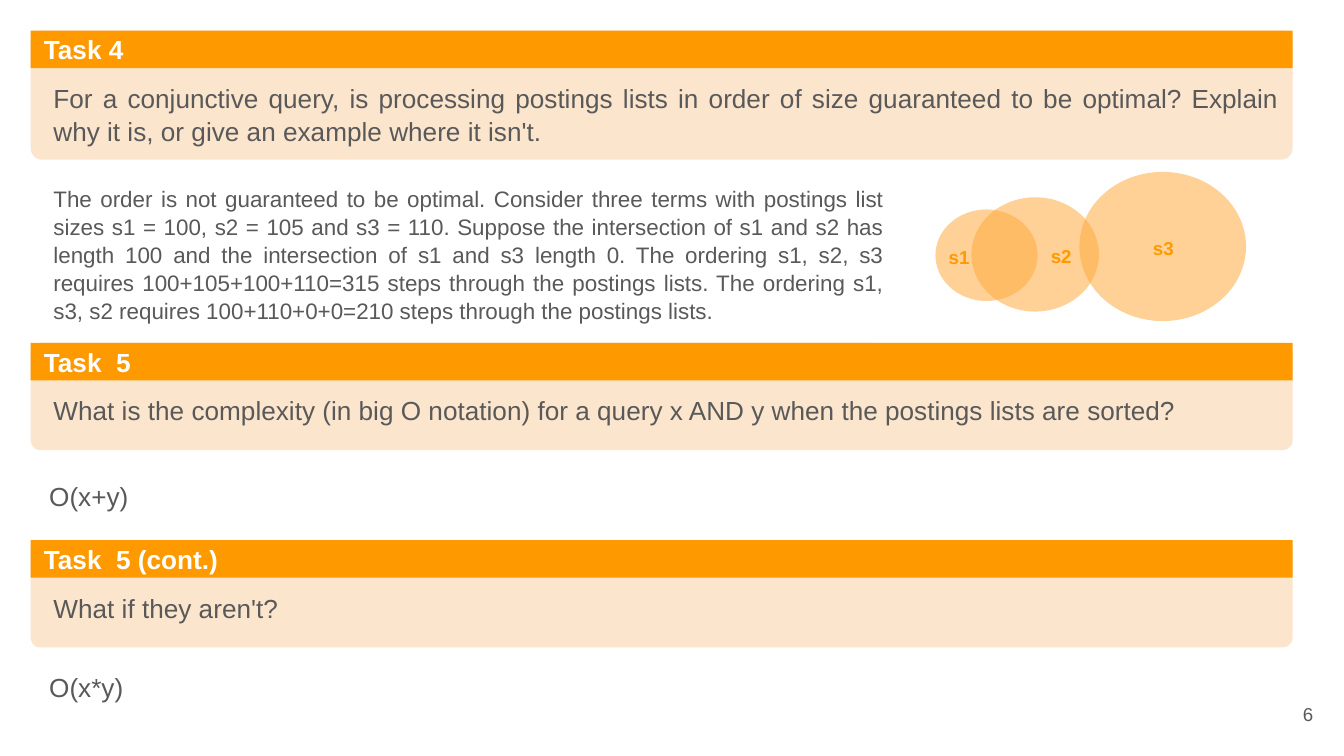
from dataclasses import dataclass

from lxml import etree
from pptx import Presentation
from pptx.dml.color import RGBColor
from pptx.enum.shapes import MSO_SHAPE
from pptx.enum.text import MSO_ANCHOR, PP_ALIGN
from pptx.oxml.ns import qn
from pptx.shapes.autoshape import Shape
from pptx.slide import Slide
from pptx.util import Cm, Pt

ROUNDED, OVAL = MSO_SHAPE.ROUNDED_RECTANGLE, MSO_SHAPE.OVAL
TOP, MIDDLE = MSO_ANCHOR.TOP, MSO_ANCHOR.MIDDLE
LEFT, RIGHT, JUSTIFY = PP_ALIGN.LEFT, PP_ALIGN.RIGHT, PP_ALIGN.JUSTIFY

ORANGE = RGBColor(0xFF, 0x99, 0x00)
PEACH = RGBColor(0xFC, 0xE5, 0xCD)
AMBER = RGBColor(0xFF, 0xAB, 0x40)
GREY = RGBColor(0x59, 0x59, 0x59)
WHITE = RGBColor(0xFF, 0xFF, 0xFF)

FONT = "Arial"
INSET = Cm(0.25)
CARD_LEFT, CARD_WIDTH = 0.58, 23.85
HEADING_HEIGHT = 0.71
QUESTION_LEFT, QUESTION_WIDTH = 0.76, 23.67
LINE_HEIGHT = 1.09
SET_OPACITY = 54


@dataclass(frozen=True)
class Box:
    """A rectangle in centimetres."""
    left: float
    top: float
    width: float
    height: float

    def lengths(self) -> tuple[Cm, Cm, Cm, Cm]:
        return Cm(self.left), Cm(self.top), Cm(self.width), Cm(self.height)


@dataclass(frozen=True)
class Task:
    heading: str
    question: str
    top: float
    height: float
    answer: str
    answer_box: Box
    answer_size: int = 14


@dataclass(frozen=True)
class PostingsSet:
    name: str
    circle: Box
    label: Box


TASKS = [
    Task("Task 4",
         "For a conjunctive query, is processing postings lists in order of size "
         "guaranteed to be optimal? Explain why it is, or give an example where it isn't.",
         0.58, 2.44,
         "The order is not guaranteed to be optimal. Consider three terms with postings "
         "list sizes s1 = 100, s2 = 105 and s3 = 110. Suppose the intersection of s1 and "
         "s2 has length 100 and the intersection of s1 and s3 length 0. The ordering s1, "
         "s2, s3 requires 100+105+100+110=315 steps through the postings lists. The "
         "ordering s1, s3, s2 requires 100+110+0+0=210 steps through the postings lists.",
         Box(0.76, 3.23, 16.21, 2.82), 12),
    Task("Task  5",
         "What is the complexity (in big O notation) for a query x AND y when the "
         "postings lists are sorted?",
         6.48, 2.03, "O(x+y)", Box(0.68, 8.81, QUESTION_WIDTH, LINE_HEIGHT)),
    Task("Task  5 (cont.)", "What if they aren't?",
         10.21, 2.03, "O(x*y)", Box(0.68, 12.42, QUESTION_WIDTH, LINE_HEIGHT)),
]

SETS = [
    PostingsSet("s1", Box(17.68, 3.96, 1.93, 1.73), Box(17.68, 4.44, 1.04, 0.94)),
    PostingsSet("s2", Box(18.36, 3.73, 2.41, 2.16), Box(19.61, 4.42, 1.04, 0.94)),
    PostingsSet("s3", Box(20.4, 3.25, 3.15, 2.82), Box(21.54, 4.27, 1.04, 0.94)),
]


def write(shape: Shape, text: str, *, size: int = 14, color: RGBColor = GREY,
          bold: bool = False, align: PP_ALIGN = LEFT, anchor: MSO_ANCHOR = TOP,
          spacing: float = 1.0) -> None:
    frame = shape.text_frame
    frame.word_wrap = True
    frame.vertical_anchor = anchor
    frame.margin_left = frame.margin_right = INSET
    frame.margin_top = frame.margin_bottom = INSET
    paragraph = frame.paragraphs[0]
    paragraph.alignment = align
    paragraph.line_spacing = spacing
    run = paragraph.add_run()
    run.text = text
    run.font.name = FONT
    run.font.size = Pt(size)
    run.font.bold = bold
    run.font.color.rgb = color


def add_text(slide: Slide, box: Box, text: str, **text_format) -> None:
    write(slide.shapes.add_textbox(*box.lengths()), text, **text_format)


def add_filled(slide: Slide, preset: MSO_SHAPE, box: Box, color: RGBColor) -> Shape:
    shape = slide.shapes.add_shape(preset, *box.lengths())
    shape.shadow.inherit = False
    shape.fill.solid()
    shape.fill.fore_color.rgb = color
    shape.line.fill.background()
    return shape


def draw_task(slide: Slide, task: Task) -> None:
    card = add_filled(slide, ROUNDED, Box(CARD_LEFT, task.top, CARD_WIDTH, task.height), PEACH)
    card.adjustments[0] = 0.09
    heading = add_filled(slide, ROUNDED,
                         Box(CARD_LEFT, task.top, CARD_WIDTH, HEADING_HEIGHT), ORANGE)
    heading.adjustments[0] = 0
    write(heading, task.heading, color=WHITE, bold=True, anchor=MIDDLE)
    question_box = Box(QUESTION_LEFT, task.top + HEADING_HEIGHT, QUESTION_WIDTH, LINE_HEIGHT)
    add_text(slide, question_box, task.question, align=JUSTIFY, spacing=1.04)
    add_text(slide, task.answer_box, task.answer, size=task.answer_size,
             align=JUSTIFY, spacing=1.04)


def draw_circle(slide: Slide, postings: PostingsSet) -> None:
    circle = add_filled(slide, OVAL, postings.circle, AMBER)
    color = circle.fill._xPr.find(qn("a:solidFill"))[0]
    etree.SubElement(color, qn("a:alpha")).set("val", str(SET_OPACITY * 1000))


def main() -> None:
    deck = Presentation()
    deck.slide_width, deck.slide_height = Cm(25.4), Cm(14.29)
    slide = deck.slides.add_slide(deck.slide_layouts[6])
    for task in TASKS:
        draw_task(slide, task)
    for postings in SETS:
        draw_circle(slide, postings)
    for postings in SETS:
        add_text(slide, postings.label, postings.name, size=10, color=ORANGE, bold=True)
    add_text(slide, Box(23.55, 12.95, 1.52, LINE_HEIGHT), "6", size=10,
             align=RIGHT, anchor=MIDDLE)
    deck.save("out.pptx")


if __name__ == "__main__":
    main()
